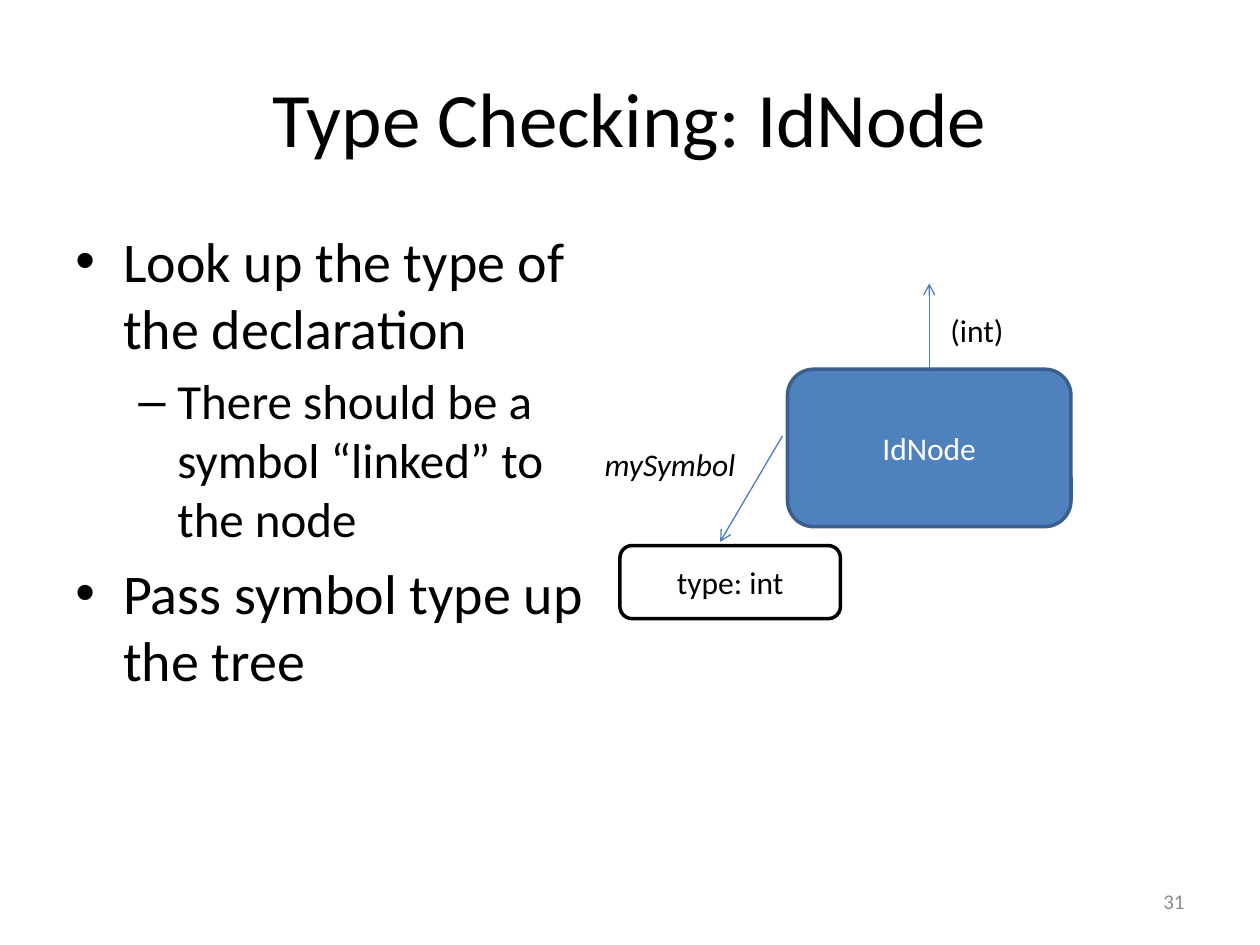
from lxml import etree
from pptx import Presentation
from pptx import util as u
from pptx.dml.color import RGBColor
from pptx.enum import shapes, text
from pptx.oxml.ns import qn

BLACK = RGBColor(0x00, 0x00, 0x00)
WHITE = RGBColor(0xFF, 0xFF, 0xFF)
GREY = RGBColor(0x8C, 0x8C, 0x8C)
BLUE = RGBColor(0x4F, 0x81, 0xBD)
DARK_BLUE = RGBColor(0x3A, 0x5F, 0x8C)
ARROW_BLUE = RGBColor(0x4B, 0x7E, 0xBC)
FONT = "Calibri"
WIDTH, HEIGHT = 10, 7.5
MARGIN = 0.05 * WIDTH
LEVELS = [("•", 32, 0.38, -0.38), ("–", 28, 0.81, -0.31)]
BULLETS = [
    (0, "Look up the type of the declaration"),
    (1, "There should be a symbol “linked” to the node"),
    (0, "Pass symbol type up the tree"),
]


def inches(*values):
    return [u.Inches(v) for v in values]


def add_run(p, words, size, color=BLACK, italic=None):
    r = p.add_run()
    r.text = words
    r.font.name = FONT
    r.font.size = u.Pt(size)
    r.font.color.rgb = color
    r.font.italic = italic


def write(sp, words, size, align, color=BLACK, italic=None):
    tf = sp.text_frame
    tf.vertical_anchor = text.MSO_ANCHOR.MIDDLE
    p = tf.paragraphs[0]
    p.alignment = align
    add_run(p, words, size, color, italic)


def add_title(s, box):
    sp = s.shapes.title
    sp.left, sp.top, sp.width, sp.height = inches(*box)
    write(sp, "Type Checking: IdNode", 44, text.PP_ALIGN.CENTER)


def add_bullets(s, box):
    tf = s.shapes.add_textbox(*inches(*box)).text_frame
    tf.word_wrap = True
    for i, (level, words) in enumerate(BULLETS):
        p = tf.add_paragraph() if i else tf.paragraphs[0]
        mark, size, margin, indent = LEVELS[level]
        p.level = level
        p.space_before = u.Pt(0.2 * size)
        pPr = p._p.get_or_add_pPr()
        pPr.set("marL", str(u.Inches(margin)))
        pPr.set("indent", str(u.Inches(indent)))
        etree.SubElement(pPr, qn("a:buFont")).set("typeface", "Arial")
        etree.SubElement(pPr, qn("a:buChar")).set("char", mark)
        add_run(p, words, size)


def add_node(s, box, words, fill, line, color):
    sp = s.shapes.add_shape(shapes.MSO_SHAPE.ROUNDED_RECTANGLE, *inches(*box))
    sp.shadow.inherit = False
    sp.fill.solid()
    sp.fill.fore_color.rgb = fill
    sp.line.color.rgb = line
    sp.line.width = u.Pt(2)
    write(sp, words, 18, text.PP_ALIGN.CENTER, color)


def add_arrow(s, start, end):
    c = s.shapes.add_connector(
        shapes.MSO_CONNECTOR.STRAIGHT, *inches(*start, *end))
    c.line.color.rgb = ARROW_BLUE
    c.line.width = u.Pt(0.75)
    etree.SubElement(c.line._get_or_add_ln(), qn("a:tailEnd")).set("type", "arrow")
    etree.SubElement(c._element.spPr, qn("a:effectLst"))


def add_label(s, box, words, italic=None):
    sp = s.shapes.add_textbox(*inches(*box))
    sp.text_frame.word_wrap = False
    sp.text_frame.auto_size = text.MSO_AUTO_SIZE.SHAPE_TO_FIT_TEXT
    write(sp, words, 18, text.PP_ALIGN.LEFT, italic=italic)


def add_diagram(s, box):
    x, y, w, h = box
    node_x, node_y, node_w, node_h = x + w - 2.25, y + 0.68, 2.25, 1.25
    symbol_w, symbol_h = 1.75, 0.58
    symbol_x, symbol_y = x + 0.22, y + h - symbol_h
    middle = node_x + node_w / 2
    add_node(s, (node_x, node_y, node_w, node_h), "IdNode", BLUE, DARK_BLUE, WHITE)
    add_arrow(s, (node_x - 0.04, node_y + 0.53),
              (symbol_x + symbol_w / 2 - 0.08, symbol_y - 0.03))
    add_label(s, (x, node_y + 0.55, 1.25, 0.4), "mySymbol", True)
    add_arrow(s, (middle, node_y), (middle, y))
    add_label(s, (middle + 0.07, y + 0.17, 0.63, 0.4), "(int)")
    add_node(s, (symbol_x, symbol_y, symbol_w, symbol_h),
             "type: int", WHITE, BLACK, BLACK)


def add_number(s, box):
    sp = s.shapes.add_textbox(*inches(*box))
    sp.text_frame.word_wrap = True
    write(sp, "31", 12, text.PP_ALIGN.RIGHT, GREY)


def main():
    prs = Presentation()
    prs.slide_width, prs.slide_height = inches(WIDTH, HEIGHT)
    s = prs.slides.add_slide(prs.slide_layouts[5])
    add_title(s, (MARGIN, 0.04 * HEIGHT, WIDTH - 2 * MARGIN, HEIGHT / 6))
    add_bullets(s, (MARGIN, 1.75, 4.33, 0.66 * HEIGHT))
    add_diagram(s, (0.47 * WIDTH, 0.3 * HEIGHT, 3.8, 2.66))
    add_number(s, (WIDTH - MARGIN - 2.33, 6.95, 2.33, 0.4))
    prs.save("out.pptx")


if __name__ == "__main__":
    main()
